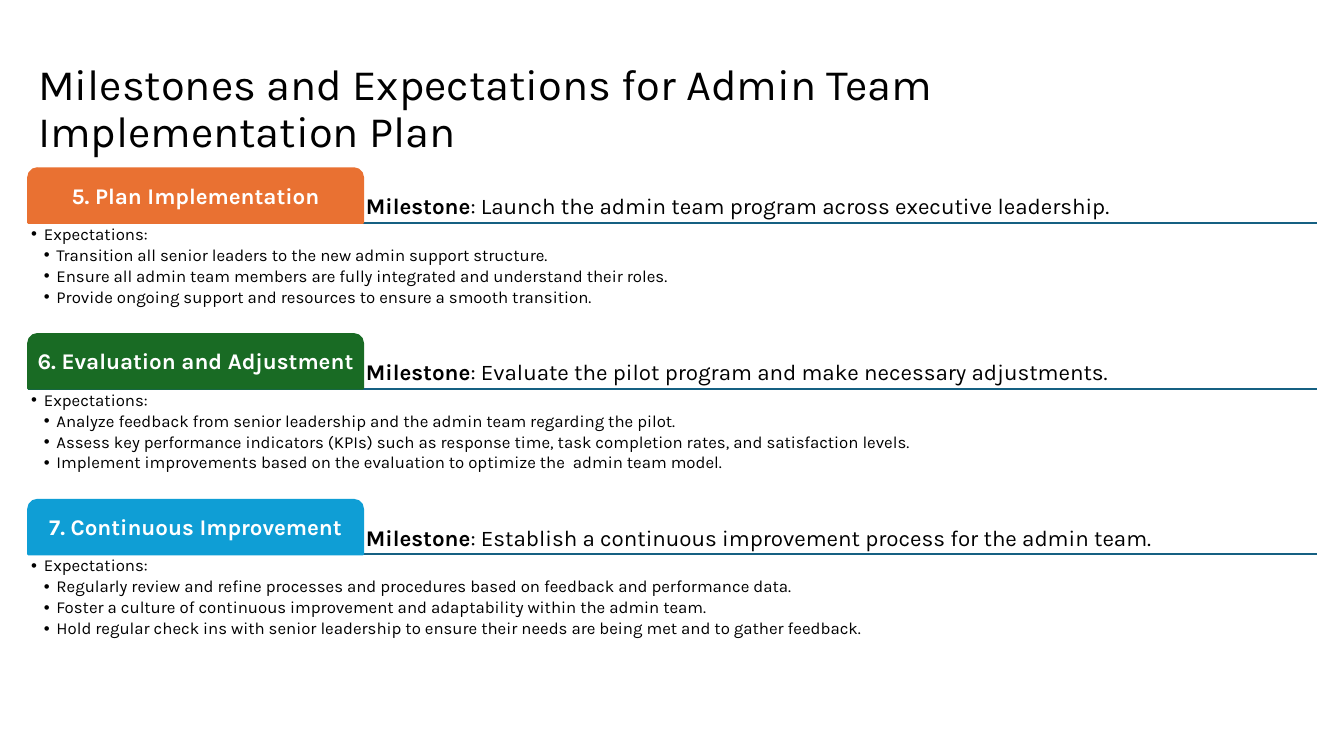
from lxml import etree
from pptx import Presentation
from pptx.dml.color import RGBColor
from pptx.enum import shapes, text
from pptx.oxml import ns
from pptx.util import Inches, Pt

BLACK = RGBColor(0, 0, 0)
WHITE = RGBColor(255, 255, 255)
ORANGE = RGBColor(0xE9, 0x71, 0x32)
GREEN = RGBColor(0x19, 0x6B, 0x24)
BLUE = RGBColor(0x0F, 0x9E, 0xD5)
TEAL = RGBColor(0x15, 0x60, 0x82)

LEFT, TOP, STEP = 0.28, 1.67, 1.645
WIDTH, TAB, HIGH = 12.78, 3.32, 0.54

STAGES = [
    ("5. Plan Implementation", ORANGE,
     "Launch the admin team program across executive leadership.",
     ["Transition all senior leaders to the new admin support structure.",
      "Ensure all admin team members are fully integrated and understand their roles.",
      "Provide ongoing support and resources to ensure a smooth transition."]),
    ("6. Evaluation and Adjustment", GREEN,
     "Evaluate the pilot program and make necessary adjustments.",
     ["Analyze feedback from senior leadership and the admin team regarding the pilot.",
      "Assess key performance indicators (KPIs) such as response time, task completion rates, and satisfaction levels.",
      "Implement improvements based on the evaluation to optimize the  admin team model."]),
    ("7. Continuous Improvement", BLUE,
     "Establish a continuous improvement process for the admin team.",
     ["Regularly review and refine processes and procedures based on feedback and performance data.",
      "Foster a culture of continuous improvement and adaptability within the admin team.",
      "Hold regular check ins with senior leadership to ensure their needs are being met and to gather feedback."]),
]


def style(para, size, color=BLACK, bold=False):
    para.line_spacing = 0.9
    for run in para.runs:
        font = run.font
        font.name, font.size, font.bold = "Karla", Pt(size), bold
        font.color.rgb = color


def setup(frame, anchor, inset=0.03):
    frame.word_wrap = True
    frame.vertical_anchor = anchor
    frame.margin_left = frame.margin_right = Inches(inset)
    frame.margin_top = frame.margin_bottom = Inches(min(inset, 0.05))


def add_box(slide, x, y, w, h, words, anchor, inset=0.03):
    box = slide.shapes.add_textbox(Inches(x), Inches(y), Inches(w), Inches(h))
    frame = box.text_frame
    setup(frame, anchor, inset)
    frame.text = words
    return frame


def add_rule(slide, y):
    line = slide.shapes.add_connector(
        shapes.MSO_CONNECTOR.STRAIGHT,
        Inches(LEFT), Inches(y), Inches(LEFT + WIDTH), Inches(y))
    line.line.color.rgb = TEAL
    line.line.width = Pt(1.5)
    etree.SubElement(line._element.spPr, ns.qn("a:effectLst"))


def add_tab(slide, y, label, color):
    tab = slide.shapes.add_shape(
        shapes.MSO_SHAPE.ROUND_2_SAME_RECTANGLE,
        Inches(LEFT), Inches(y), Inches(TAB), Inches(HIGH))
    tab.shadow.inherit = False
    tab.fill.solid()
    tab.fill.fore_color.rgb = color
    tab.line.color.rgb = color
    tab.line.width = Pt(1.5)
    frame = tab.text_frame
    setup(frame, text.MSO_ANCHOR.MIDDLE)
    frame.text = label
    para = frame.paragraphs[0]
    para.alignment = text.PP_ALIGN.CENTER
    style(para, 16, WHITE, True)


def add_goal(slide, y, goal):
    frame = add_box(slide, LEFT + TAB, y, WIDTH - TAB, HIGH,
                    "Milestone", text.MSO_ANCHOR.BOTTOM)
    para = frame.paragraphs[0]
    para.add_run().text = ": " + goal
    style(para, 16)
    para.runs[0].font.bold = True


def add_list(slide, y, items):
    frame = add_box(slide, LEFT, y, WIDTH, 1.08,
                    "\n".join(["Expectations:"] + items), text.MSO_ANCHOR.TOP)
    for i, para in enumerate(frame.paragraphs):
        para.level = 2 if i else 1
        props = para._p.get_or_add_pPr()
        props.set("marL", str(Inches(0.25 if i else 0.125)))
        props.set("indent", str(Inches(-0.125)))
        etree.SubElement(props, ns.qn("a:buFont"), typeface="Arial")
        etree.SubElement(props, ns.qn("a:buChar"), char="•")
        para.space_after = Pt(2)
        style(para, 12)


def main():
    deck = Presentation()
    deck.slide_width, deck.slide_height = Inches(13.33), Inches(7.5)
    slide = deck.slides.add_slide(deck.slide_layouts[6])
    title = add_box(slide, LEFT, 0.71, 12.14, 0.77,
                    "Milestones and Expectations for Admin Team Implementation Plan",
                    text.MSO_ANCHOR.MIDDLE, 0.1)
    style(title.paragraphs[0], 31)
    for i, (label, color, goal, items) in enumerate(STAGES):
        y = TOP + i * STEP
        add_rule(slide, y + HIGH)
        add_goal(slide, y, goal)
        add_tab(slide, y, label, color)
        add_list(slide, y + HIGH, items)
    deck.save("out.pptx")


if __name__ == "__main__":
    main()
